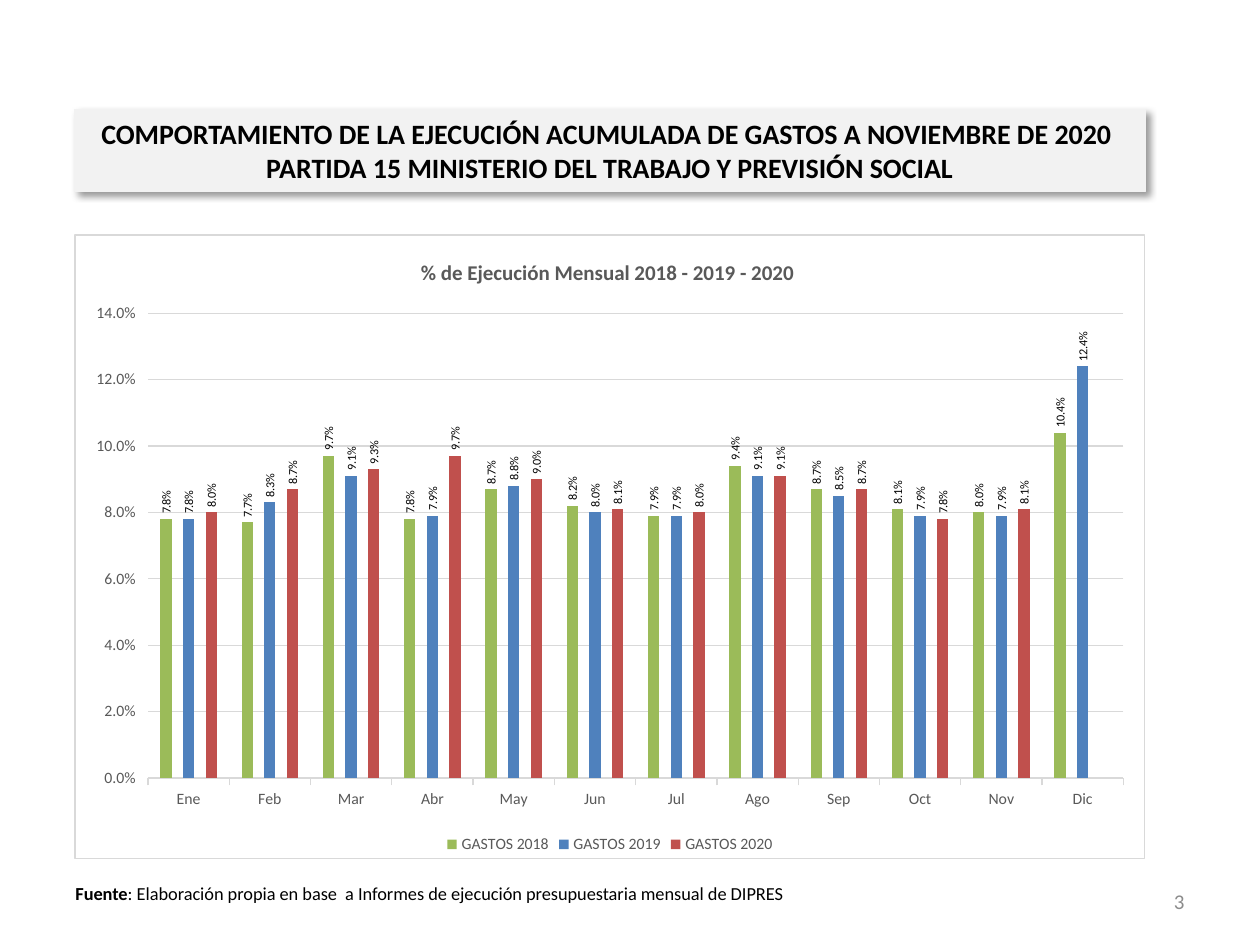
from dataclasses import dataclass

from lxml import etree
from pptx import Presentation
from pptx.chart.data import CategoryChartData
from pptx.dml.color import RGBColor
from pptx.enum.chart import XL_CHART_TYPE as ChartType
from pptx.enum.chart import XL_LABEL_POSITION as LabelPos
from pptx.enum.chart import XL_LEGEND_POSITION as LegendPos
from pptx.enum.chart import XL_TICK_MARK as Tick
from pptx.enum.shapes import MSO_SHAPE as Shape
from pptx.enum.text import MSO_ANCHOR as Anchor
from pptx.enum.text import PP_ALIGN as Align
from pptx.oxml import parse_xml
from pptx.oxml.ns import nsdecls, qn
from pptx.util import Inches, Pt


@dataclass(frozen=True)
class Theme:
    font: str = "Calibri"
    black: str = "000000"
    white: str = "FFFFFF"
    banner: str = "F2F2F2"
    number: str = "8C8C8C"
    axis: str = "595959"
    rule: str = "D9D9D9"
    series: tuple = ("9BBB59", "4F81BD", "C0504D")
    heading_size: float = 16
    chart_title_size: float = 12
    number_size: float = 12
    source_size: float = 10.5
    chart_size: float = 10
    axis_size: float = 9
    label_size: float = 7


THEME = Theme()

MONTHS = ["Ene", "Feb", "Mar", "Abr", "May", "Jun",
          "Jul", "Ago", "Sep", "Oct", "Nov", "Dic"]
# Monthly execution in percent
SPENDING = {
    "GASTOS 2018": [7.8, 7.7, 9.7, 7.8, 8.7, 8.2, 7.9, 9.4, 8.7, 8.1, 8.0, 10.4],
    "GASTOS 2019": [7.8, 8.3, 9.1, 7.9, 8.8, 8.0, 7.9, 9.1, 8.5, 7.9, 7.9, 12.4],
    "GASTOS 2020": [8.0, 8.7, 9.3, 9.7, 9.0, 8.1, 8.0, 9.1, 8.7, 7.8, 8.1, None],
}


def rgb(color):
    return RGBColor.from_string(color)


def style_font(font, size, color, bold=False):
    font.name = THEME.font
    font.size = Pt(size)
    font.bold = bold
    font.color.rgb = rgb(color)


def style_line(line, color):
    line.color.rgb = rgb(color)
    line.width = Pt(0.75)


def add_text(slide, box, runs, size, color, align=Align.LEFT, anchor=Anchor.TOP):
    """Add a one-paragraph text box; runs are (text, bold) pairs."""
    tf = slide.shapes.add_textbox(*map(Inches, box)).text_frame
    tf.word_wrap = True
    tf.vertical_anchor = anchor
    p = tf.paragraphs[0]
    p.alignment = align
    for text, bold in runs:
        r = p.add_run()
        r.text = text
        style_font(r.font, size, color, bold)


def add_shadow(sp):
    sp.shadow.inherit = False
    effects = sp._element.spPr.find(qn("a:effectLst"))
    effects.append(parse_xml(
        f'<a:outerShdw {nsdecls("a")} blurRad="{Pt(4)}" dist="{Pt(3)}" '
        f'dir="2700000" algn="tl" rotWithShape="0">'
        f'<a:srgbClr val="{THEME.black}"><a:alpha val="40000"/></a:srgbClr>'
        f'</a:outerShdw>'))


def add_banner(slide, box, text):
    sp = slide.shapes.add_shape(Shape.RECTANGLE, *map(Inches, box))
    sp.fill.solid()
    sp.fill.fore_color.rgb = rgb(THEME.banner)
    style_line(sp.line, THEME.banner)
    add_shadow(sp)
    tf = sp.text_frame
    tf.word_wrap = True
    tf.vertical_anchor = Anchor.MIDDLE
    tf.margin_left = tf.margin_right = Inches(0.11)
    p = tf.paragraphs[0]
    p.text = text
    p.alignment = Align.CENTER
    for r in p.runs:
        style_font(r.font, THEME.heading_size, THEME.black, True)


def frame_chart(chart):
    """Give the chart area a white fill and a thin border."""
    area = parse_xml(
        f'<c:spPr {nsdecls("c", "a")}>'
        f'<a:solidFill><a:srgbClr val="{THEME.white}"/></a:solidFill>'
        f'<a:ln w="{Pt(0.75)}"><a:solidFill><a:srgbClr val="{THEME.rule}"/>'
        f'</a:solidFill></a:ln></c:spPr>')
    chart._chartSpace.find(qn("c:chart")).addnext(area)


def style_series(series, color):
    series.format.fill.solid()
    series.format.fill.fore_color.rgb = rgb(color)
    labels = series.data_labels
    labels.show_value = True
    labels.number_format = "0.0%"
    labels.number_format_is_linked = False
    labels.position = LabelPos.OUTSIDE_END
    style_font(labels.font, THEME.label_size, THEME.black)
    body = labels._element.find(qn("c:txPr")).find(qn("a:bodyPr"))
    body.set("rot", "-5400000")
    body.set("vert", "horz")


def style_axes(chart):
    for axis in (chart.category_axis, chart.value_axis):
        axis.major_tick_mark = Tick.OUTSIDE
        axis.minor_tick_mark = Tick.NONE
        style_font(axis.tick_labels.font, THEME.axis_size, THEME.axis)
    style_line(chart.category_axis.format.line, THEME.rule)
    values = chart.value_axis
    values.format.line.fill.background()
    values.tick_labels.number_format = "0.0%"
    values.tick_labels.number_format_is_linked = False
    style_line(values.major_gridlines.format.line, THEME.rule)


def add_spending_chart(slide, box, title):
    data = CategoryChartData(number_format="0.0%")
    data.categories = MONTHS
    for name, percents in SPENDING.items():
        data.add_series(name, [None if v is None else round(v / 100, 3)
                               for v in percents])
    chart = slide.shapes.add_chart(
        ChartType.COLUMN_CLUSTERED, *map(Inches, box), data).chart
    style_font(chart.font, THEME.chart_size, THEME.black)
    frame_chart(chart)

    # Title and legend
    chart.has_title = True
    p = chart.chart_title.text_frame.paragraphs[0]
    p.text = title
    style_font(p.runs[0].font, THEME.chart_title_size, THEME.axis, True)
    chart.chart_title.include_in_layout = False
    chart.has_legend = True
    chart.legend.position = LegendPos.BOTTOM
    chart.legend.include_in_layout = False
    style_font(chart.legend.font, THEME.axis_size, THEME.axis)

    # Columns and axes
    plot = chart.plots[0]
    plot.gap_width = 219
    plot.overlap = -100
    plot.vary_by_categories = False
    for series, color in zip(plot.series, THEME.series):
        style_series(series, color)
    style_axes(chart)


def main():
    prs = Presentation()
    prs.slide_width, prs.slide_height = Inches(10), Inches(7.5)
    slide = prs.slides.add_slide(prs.slide_layouts[6])

    # Source note and page number
    add_text(slide, (0.5, 6.95, 5.91, 0.28),
             [("Fuente", True),
              (": Elaboración propia en base  a Informes de ejecución "
               "presupuestaria mensual de DIPRES", False)],
             THEME.source_size, THEME.black)
    add_text(slide, (7.17, 6.95, 2.33, 0.4), [("3", False)],
             THEME.number_size, THEME.number, Align.RIGHT, Anchor.MIDDLE)

    # Heading and chart
    add_banner(slide, (0.59, 0.87, 8.5, 0.65),
               "COMPORTAMIENTO DE LA EJECUCIÓN ACUMULADA DE GASTOS A NOVIEMBRE "
               "DE 2020 \vPARTIDA 15 MINISTERIO DEL TRABAJO Y PREVISIÓN SOCIAL")
    add_spending_chart(slide, (0.59, 1.86, 8.5, 4.96),
                       "% de Ejecución Mensual 2018 - 2019 - 2020 ")

    prs.save("out.pptx")


if __name__ == "__main__":
    main()
